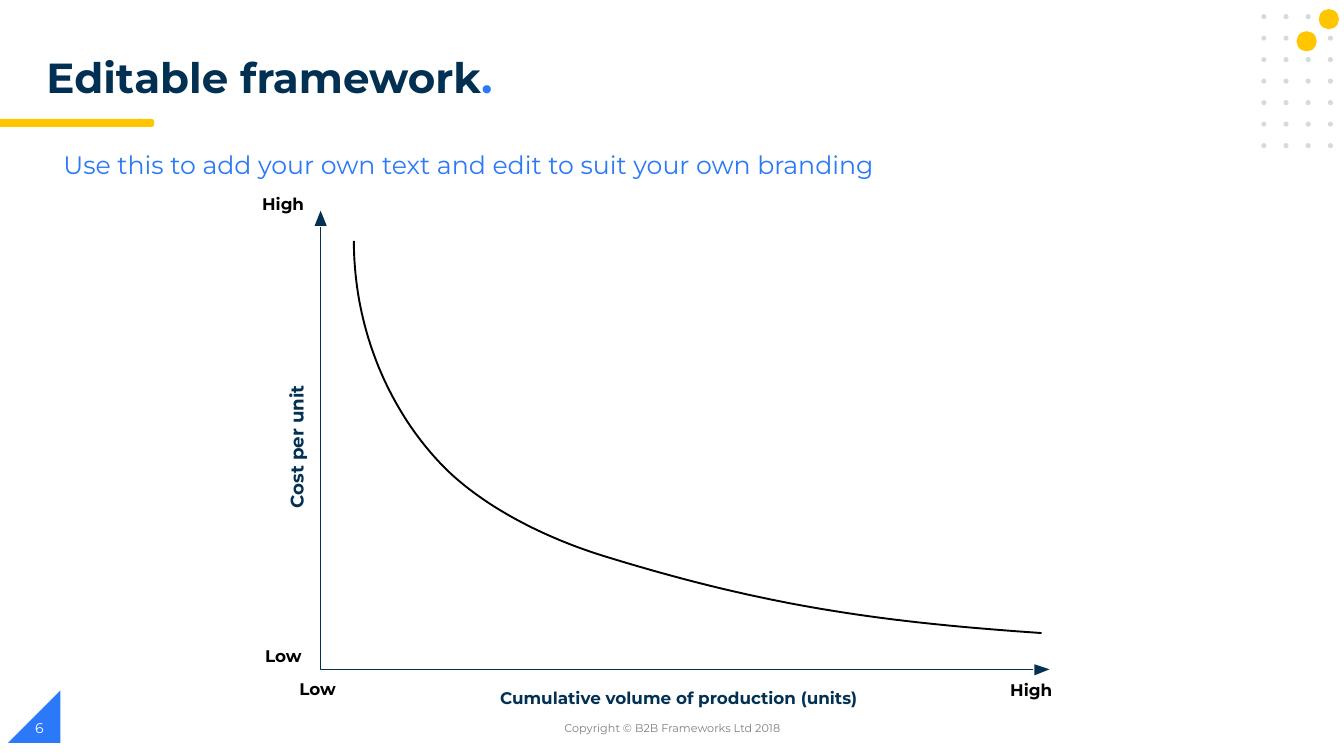
"""Build the experience curve slide: unit cost falling with cumulative volume."""
import pptx
import pptx.dml.color
import pptx.enum.shapes
import pptx.enum.text
import pptx.util

Inches = pptx.util.Inches
Pt = pptx.util.Pt
SHAPE = pptx.enum.shapes.MSO_SHAPE
ALIGN = pptx.enum.text.PP_ALIGN
ANCHOR = pptx.enum.text.MSO_ANCHOR
AUTO = pptx.enum.text.MSO_AUTO_SIZE

NAVY, AXIS, BLUE, YELLOW = "023053", "023154", "2B79F8", "FFC600"
DOT, GREY, BLACK, WHITE = "D1DBE0", "7F7F7F", "000000", "FFFFFF"
BODY_INSETS = (0.1, 0.05, 0.1, 0.05)
LABEL_INSETS = (0.01, 0.01, 0, 0)


def rgb(value):
    """Turn a hex string into a colour."""
    return pptx.dml.color.RGBColor.from_string(value)


def bezier(start, pull_out, pull_in, end, steps=40):
    """Sample a cubic curve, leaving out its start point."""
    points = []
    for step in range(1, steps + 1):
        t = step / steps
        weights = ((1 - t) ** 3, 3 * t * (1 - t) ** 2, 3 * t * t * (1 - t), t ** 3)
        points.append(tuple(
            sum(w * c for w, c in zip(weights, axis))
            for axis in zip(start, pull_out, pull_in, end)))
    return points


class FrameworkSlide:
    """Hold the slide and its font, and draw each kind of element."""

    def __init__(self, deck, font="Montserrat"):
        """Add a title-only slide to the deck."""
        self.slide = deck.slides.add_slide(deck.slide_layouts[5])
        self.shapes = self.slide.shapes
        self.font = font

    def style(self, font, size, color, bold=False):
        """Set the face, size, colour and weight of a font."""
        font.name, font.size, font.bold = self.font, Pt(size), bold
        font.color.rgb = rgb(color)

    def frame(self, box, insets, anchor=ANCHOR.TOP, auto=AUTO.NONE):
        """Set up the text frame of a box and return its first paragraph."""
        frame = box.text_frame
        frame.word_wrap = True
        frame.auto_size = auto
        frame.vertical_anchor = anchor
        (frame.margin_left, frame.margin_top,
         frame.margin_right, frame.margin_bottom) = map(Inches, insets)
        return frame.paragraphs[0]

    def title(self, words, mark, left, top, width, height):
        """Place the title with its closing mark in blue."""
        box = self.shapes.title
        box.left, box.top, box.width, box.height = map(Inches, (left, top, width, height))
        line = self.frame(box, BODY_INSETS)
        line.alignment, line.line_spacing = ALIGN.LEFT, 0.9
        self.style(line.font, 30, NAVY, True)
        line.add_run().text = words
        stop = line.add_run()
        stop.text = mark
        stop.font.color.rgb = rgb(BLUE)

    def text(self, words, place, size, color, bold=False, insets=BODY_INSETS,
             anchor=ANCHOR.TOP, align=ALIGN.LEFT, auto=AUTO.NONE, rotation=0):
        """Add a one-line text box."""
        box = self.shapes.add_textbox(*map(Inches, place))
        line = self.frame(box, insets, anchor, auto)
        line.text, line.alignment = words, align
        self.style(line.font, size, color, bold)
        box.rotation = rotation

    def label(self, words, place, color=BLACK, size=12, rotation=0):
        """Add a bold chart label."""
        self.text(words, place, size, color, True, LABEL_INSETS,
                  auto=AUTO.SHAPE_TO_FIT_TEXT, rotation=rotation)

    def preset(self, kind, place, color):
        """Add a filled preset shape without an outline."""
        shape = self.shapes.add_shape(kind, *map(Inches, place))
        shape.shadow.inherit = False
        shape.fill.solid()
        shape.fill.fore_color.rgb = rgb(color)
        shape.line.fill.background()
        return shape

    def outline(self, points, fill=None, line=None, width=1):
        """Add a closed filled outline or an open stroked one."""
        corners = [(Inches(x), Inches(y)) for x, y in points]
        builder = self.shapes.build_freeform(*corners[0])
        builder.add_line_segments(corners[1:], close=fill is not None)
        shape = builder.convert_to_shape()
        shape.shadow.inherit = False
        if fill:
            shape.fill.solid()
            shape.fill.fore_color.rgb = rgb(fill)
            shape.line.fill.background()
        else:
            shape.fill.background()
            shape.line.color.rgb = rgb(line)
            shape.line.width = Pt(width)


def main():
    """Draw the slide and save it."""
    deck = pptx.Presentation()
    deck.slide_width, deck.slide_height = Inches(13.33), Inches(7.5)
    page = FrameworkSlide(deck)

    corner = page.preset(SHAPE.RIGHT_TRIANGLE, (0.08, 6.85, 0.52, 0.52), BLUE)
    corner._element.spPr.xfrm.set("flipH", "1")
    for top in (1.18, 1.2):
        page.preset(SHAPE.FLOWCHART_TERMINATOR, (1.34, top, 0.19, 0.06), YELLOW)
        page.preset(SHAPE.RECTANGLE, (0, top, 1.41, 0.06), YELLOW)
    for row in range(7):
        for column in range(4):
            page.preset(SHAPE.OVAL, (12.51 + 0.22 * column, 0.14 + 0.64 * row / 3,
                                     0.05, 0.05), DOT)
    for left, top in ((13.08, 0.09), (12.86, 0.31)):
        page.preset(SHAPE.OVAL, (left, top, 0.2, 0.2), YELLOW)

    page.title("Editable framework", ".", 0.36, 0.52, 5.64, 0.6)
    page.text("Copyright © B2B Frameworks Ltd 2018", (4.42, 7.02, 4.5, 0.4), 8, GREY,
              anchor=ANCHOR.MIDDLE, align=ALIGN.CENTER)
    page.text("6", (0.25, 7.02, 3, 0.4), 10, WHITE, anchor=ANCHOR.MIDDLE)
    page.text("Use this to add your own text and edit to suit your own branding",
              (0.53, 1.43, 8.59, 0.48), 18, BLUE)

    page.label("Cumulative volume of production (units)", (4.95, 6.81, 4.04, 0.21), AXIS)
    page.label("Cost per unit", (2.25, 4.26, 1.36, 0.22), AXIS, 13, 270)

    page.outline([(3.18, 2.09), (3.12, 2.24), (3.24, 2.24)], fill=AXIS)
    page.outline([(10.25, 6.64), (3.18, 6.64), (3.18, 2.25)], line=AXIS, width=1.03)
    page.outline([(10.26, 6.59), (10.26, 6.7), (10.41, 6.64)], fill=AXIS)

    cost_curve = [(3.51, 2.39)]
    for bend in (((3.51, 3.28), (3.87, 4.1), (4.42, 4.65)),
                 ((4.87, 5.09), (5.52, 5.37), (5.97, 5.51)),
                 ((7.58, 6.01), (8.72, 6.17), (10.33, 6.28))):
        cost_curve += bezier(cost_curve[-1], *bend)
    page.outline(cost_curve, line=BLACK, width=1.36)

    for words, left, top, width in (("Low", 2.96, 6.72, 0.43), ("Low", 2.62, 6.4, 0.43),
                                    ("High", 2.59, 1.91, 0.49), ("High", 10.01, 6.73, 0.49)):
        page.label(words, (left, top, width, 0.21))

    deck.save("out.pptx")


if __name__ == "__main__":
    main()
